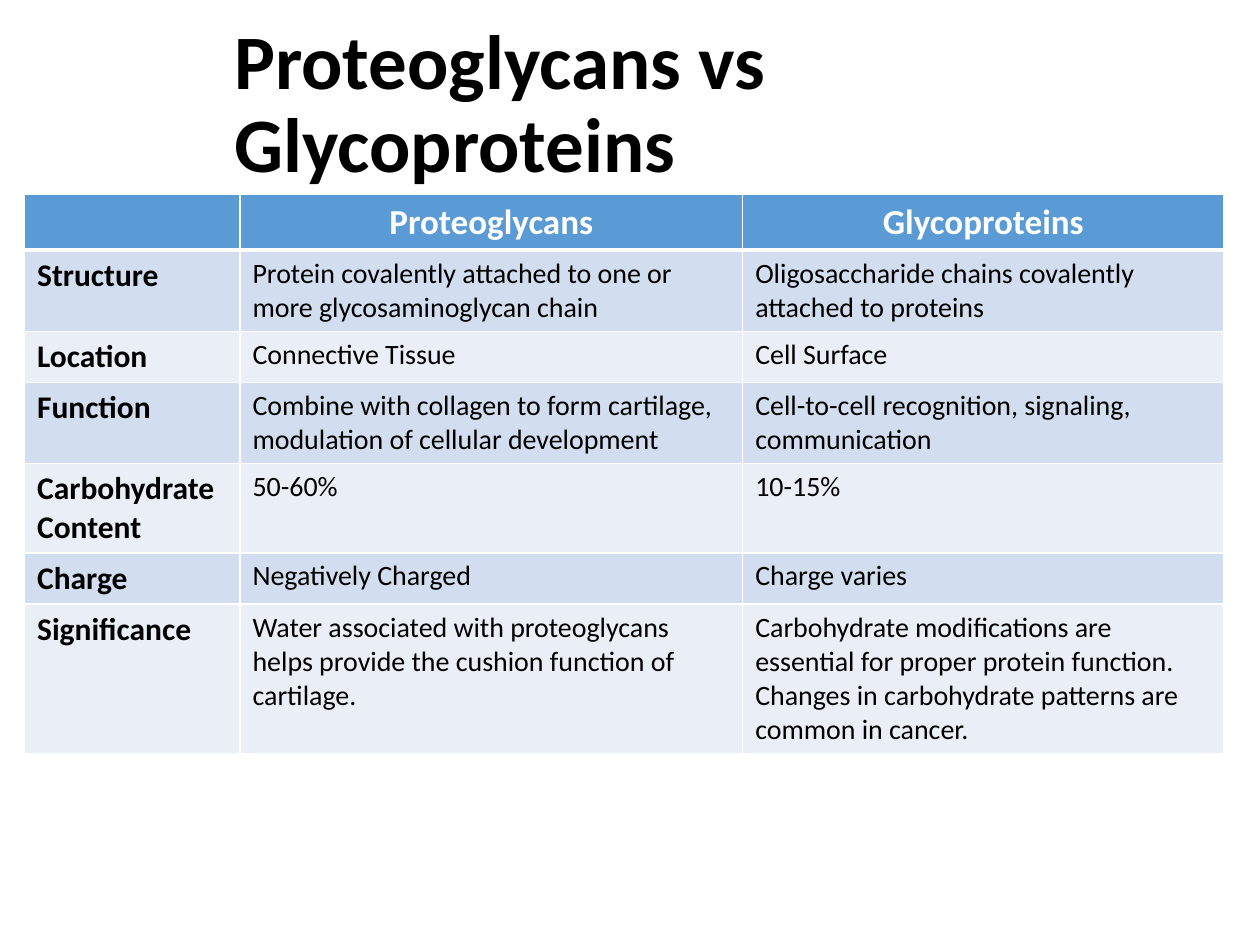
import dataclasses

import lxml.etree
import pptx
import pptx.dml.color
import pptx.enum.text
import pptx.oxml.ns
import pptx.util


@dataclasses.dataclass(frozen=True)
class Theme:
    font: str = "Calibri"
    ink: str = "000000"
    paper: str = "FFFFFF"
    header: str = "5B9BD5"
    bands: tuple = ("D2DEEF", "EAEFF7")
    title_size: int = 44
    header_size: int = 20
    label_size: int = 18
    body_size: int = 16
    rule: int = 1
    header_rule: int = 3


COMPARISON = [
    ("", "Proteoglycans", "Glycoproteins"),
    ("Structure",
     "Protein covalently attached to one or more glycosaminoglycan chain",
     "Oligosaccharide chains covalently attached to proteins"),
    ("Location", "Connective Tissue", "Cell Surface"),
    ("Function",
     "Combine with collagen to form cartilage, modulation of cellular development",
     "Cell-to-cell recognition, signaling, communication"),
    ("Carbohydrate Content", "50-60%", "10-15%"),
    ("Charge", "Negatively Charged", "Charge varies"),
    ("Significance",
     "Water associated with proteoglycans helps provide the cushion function of cartilage.",
     "Carbohydrate modifications are essential for proper protein function. "
     "Changes in carbohydrate patterns are common in cancer."),
]


class SlideBuilder:
    """Places elements on one slide; lengths are percentages of the slide's size."""

    def __init__(self, deck, theme):
        self.deck = deck
        self.theme = theme
        self.slide = deck.slides.add_slide(deck.slide_layouts[6])

    def across(self, percent):
        return round(self.deck.slide_width * percent / 100)

    def down(self, percent):
        return round(self.deck.slide_height * percent / 100)

    def style(self, para, size, color, bold):
        para.font.name = self.theme.font
        para.font.size = pptx.util.Pt(size)
        para.font.bold = bold
        para.font.color.rgb = pptx.dml.color.RGBColor.from_string(color)

    def title(self, text, left, top, width, height):
        box = self.slide.shapes.add_textbox(
            self.across(left), self.down(top), self.across(width), self.down(height))
        frame = box.text_frame
        frame.word_wrap = True
        frame.auto_size = pptx.enum.text.MSO_AUTO_SIZE.NONE
        frame.vertical_anchor = pptx.enum.text.MSO_ANCHOR.MIDDLE
        frame.text = text
        para = frame.paragraphs[0]
        para.line_spacing = 0.9
        self.style(para, self.theme.title_size, self.theme.ink, True)

    def table(self, rows, left, top, columns, row_height):
        frame = self.slide.shapes.add_table(
            len(rows), len(columns), self.across(left), self.down(top),
            self.across(sum(columns)), self.down(row_height * len(rows)))
        grid = frame.table
        for column, width in zip(grid.columns, columns):
            column.width = self.across(width)
        for row_index, row in enumerate(rows):
            grid.rows[row_index].height = self.down(row_height)
            for column_index, text in enumerate(row):
                self.cell(grid.cell(row_index, column_index), text,
                          row_index, column_index)

    def cell(self, cell, text, row_index, column_index):
        theme = self.theme
        is_header, is_label = row_index == 0, column_index == 0
        cell.text = text
        para = cell.text_frame.paragraphs[0]
        if is_header:
            para.alignment = pptx.enum.text.PP_ALIGN.CENTER
            self.style(para, theme.header_size, theme.paper, True)
            fill = theme.header
        else:
            size = theme.label_size if is_label else theme.body_size
            self.style(para, size, theme.ink, is_label)
            fill = theme.bands[(row_index - 1) % 2]
        rules = dict.fromkeys(("lnL", "lnR", "lnT", "lnB"), theme.rule)
        if is_header:
            rules["lnB"] = theme.header_rule
        elif row_index == 1:
            rules["lnT"] = theme.header_rule
        self.borders(cell, rules)
        cell.fill.solid()
        cell.fill.fore_color.rgb = pptx.dml.color.RGBColor.from_string(fill)

    def borders(self, cell, rules):
        """Draw each side's rule; call before filling, as borders come first in the XML."""
        properties = cell._tc.get_or_add_tcPr()
        qualified = pptx.oxml.ns.qn
        for side, width in rules.items():
            line = lxml.etree.SubElement(
                properties, qualified(f"a:{side}"), w=str(pptx.util.Pt(width)))
            fill = lxml.etree.SubElement(line, qualified("a:solidFill"))
            lxml.etree.SubElement(fill, qualified("a:srgbClr"), val=self.theme.paper)


def main():
    deck = pptx.Presentation()
    deck.slide_width = pptx.util.Inches(10)
    deck.slide_height = pptx.util.Inches(7.5)
    builder = SlideBuilder(deck, Theme())
    builder.title("Proteoglycans vs Glycoproteins",
                  left=17.6, top=5.6, width=77.8, height=11.33)
    builder.table(COMPARISON, left=1.95, top=20.6,
                  columns=(17.1, 39.9, 38.2), row_height=5.4)
    deck.save("out.pptx")


if __name__ == "__main__":
    main()
